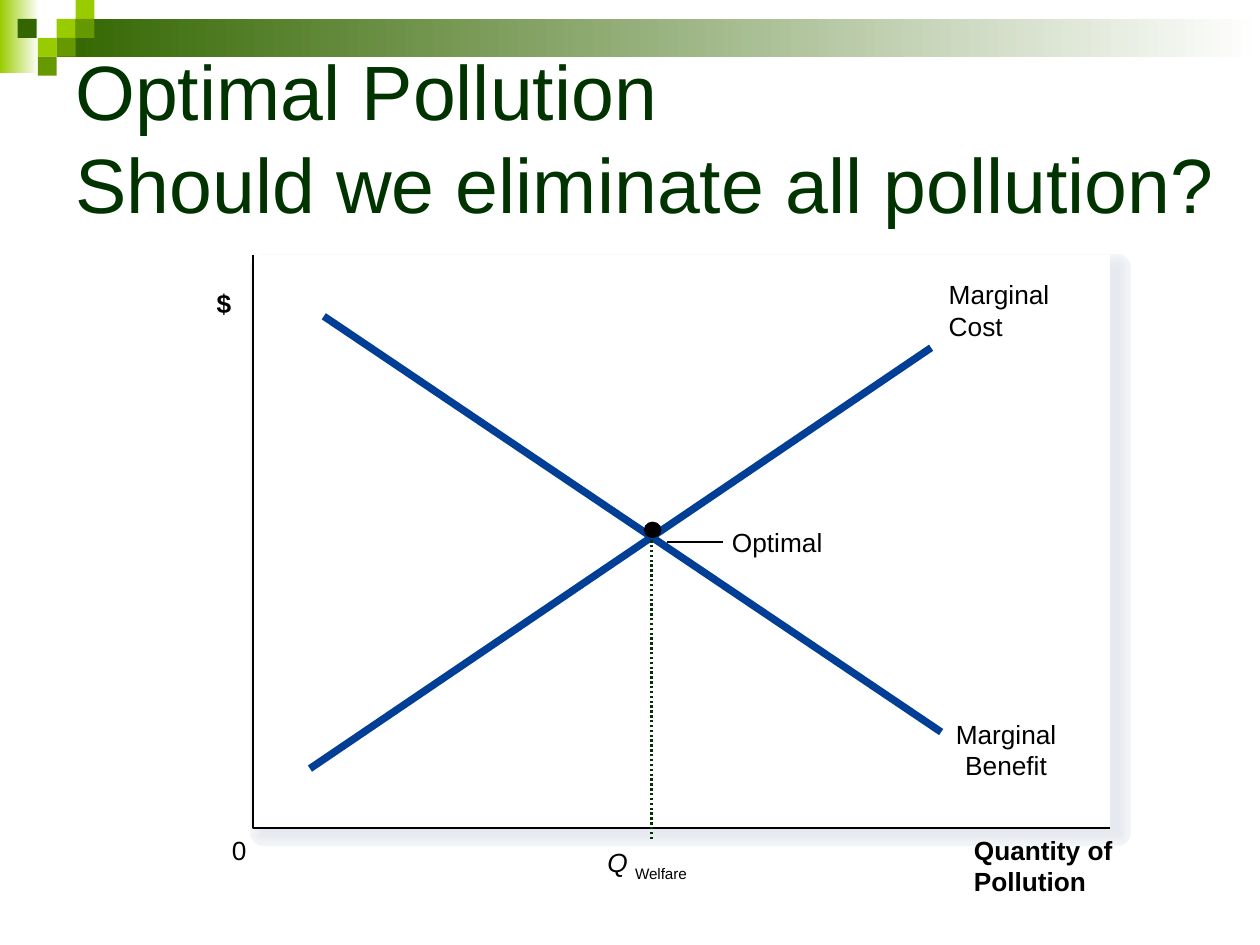
from pptx import Presentation
from pptx.dml.color import RGBColor
from pptx.enum.dml import MSO_LINE
from pptx.enum.shapes import MSO_CONNECTOR, MSO_SHAPE as Shape
from pptx.enum.text import MSO_ANCHOR as Anchor, PP_ALIGN as Align
from pptx.oxml.ns import qn
from pptx.util import Inches, Pt
from lxml.etree import SubElement

BLACK, WHITE, BLUE, DARK_GREEN = "000000", "FFFFFF", "003F95", "003300"
LIME, GREEN, FOREST = "99CC00", "669900", "336600"
SQUARE = 0.15
SQUARES = [(0.45, 0.15, LIME), (0.6, 0, LIME), (0.6, 0.15, GREEN), (0.3, 0.3, LIME),
           (0.14, 0.15, FOREST), (0.45, 0.3, GREEN), (0.3, 0.45, GREEN)]
SHADOW_COLORS = ["F3F6F9", "F2F4F8", "F1F4F7", "F0F2F5", "EEF1F4", "EDEFF3",
                 "EBEEF2", "EAECF1", "E9EBF0", "E7EAEF", "E6E9EF"]
PLOT = (2.01, 2.02, 6.8, 4.55)
SHADOW = (2.09, 2.12, 6.78, 4.49)


def color(value):
    """Turn a hex string into a colour."""
    return RGBColor.from_string(value)


def add_block(slide, box, fill, kind=Shape.RECTANGLE, line_width=0):
    """Add a solid shape, outlined in its own colour if a width is given."""
    shape = slide.shapes.add_shape(kind, *map(Inches, box))
    shape.shadow.inherit = False
    shape.fill.solid()
    shape.fill.fore_color.rgb = color(fill)
    if line_width:
        shape.line.color.rgb = color(fill)
        shape.line.width = Pt(line_width)
    else:
        shape.line.fill.background()
    return shape


def add_fade(slide, box, start):
    """Add a rectangle that fades to white from left to right."""
    fill = add_block(slide, box, start).fill
    fill.gradient()
    fill.gradient_angle = 0
    for stop, value in zip(fill.gradient_stops, (start, WHITE)):
        stop.color.rgb = color(value)


def add_line(slide, start, end, stroke, width, dash=None):
    """Add a straight line between two points."""
    line = slide.shapes.add_connector(
        MSO_CONNECTOR.STRAIGHT, *map(Inches, (*start, *end)))
    line.line.color.rgb = color(stroke)
    line.line.width = Pt(width)
    if dash:
        line.line.dash_style = dash
    SubElement(line._element.spPr, qn("a:effectLst"))


def add_axes(slide):
    """Draw both axes as one open outline."""
    left, top, width, height = PLOT
    bottom, right = top + height, left + width
    builder = slide.shapes.build_freeform(Inches(left), Inches(top))
    builder.add_line_segments(
        [(Inches(left), Inches(bottom)), (Inches(right), Inches(bottom))], close=False)
    axes = builder.convert_to_shape()
    axes.shadow.inherit = False
    axes.fill.background()
    axes.line.color.rgb = color(BLACK)
    axes.line.width = Pt(1.38)


def add_span(para, text, size=15, ink=BLACK, bold=False, italic=False):
    """Add one run of text and return it."""
    span = para.add_run()
    span.text = text
    font = span.font
    font.name, font.size, font.bold, font.italic = "Arial", Pt(size), bold, italic
    font.color.rgb = color(ink)
    return span


def add_frame(slide, box, inset=0, wrap=False):
    """Add an empty text box and return its text frame."""
    frame = slide.shapes.add_textbox(*map(Inches, box)).text_frame
    frame.word_wrap = wrap
    frame.margin_left = frame.margin_right = Inches(inset)
    frame.margin_top = frame.margin_bottom = Inches(inset / 2)
    return frame


def add_label(slide, box, *lines, bold=False, align=Align.LEFT):
    """Add a label with one paragraph for each line."""
    frame = add_frame(slide, box)
    for index, text in enumerate(lines):
        para = frame.add_paragraph() if index else frame.paragraphs[0]
        para.alignment = align
        add_span(para, text, bold=bold)


def add_title(slide):
    """Add the two-line title."""
    frame = add_frame(slide, (0.5, 0.33, 9.5, 1.5), inset=0.1, wrap=True)
    frame.vertical_anchor = Anchor.MIDDLE
    para = frame.paragraphs[0]
    add_span(para, "Optimal Pollution", 44, DARK_GREEN)
    para.add_line_break()
    add_span(para, "Should we eliminate all pollution?", 44, DARK_GREEN)


def add_banner(slide):
    """Add the fading bar and the squares at the top."""
    add_fade(slide, (0, 0, 0.31, 0.58), LIME)
    add_fade(slide, (0.45, 0.15, 9.55, 0.3), FOREST)
    for left, top, fill in SQUARES:
        add_block(slide, (left, top, SQUARE, SQUARE), fill)


def add_plot(slide):
    """Add the plot area with its soft shadow, axes and axis labels."""
    for step, fill in enumerate(SHADOW_COLORS):
        add_block(slide, SHADOW, fill, line_width=15.5 - 1.41 * step)
    add_block(slide, PLOT, WHITE)
    add_axes(slide)
    add_label(slide, (7.73, 6.62, 1.16, 0.51), "Quantity of", "Pollution", bold=True)
    add_label(slide, (1.84, 6.62, 0.12, 0.25), "0")
    add_label(slide, (1.72, 2.28, 0.12, 0.25), "$", bold=True)


def add_curves(slide):
    """Add the two curves and the optimal point with their labels."""
    add_line(slide, (5.29, 4.3), (5.74, 4.3), BLACK, 1.38)
    add_label(slide, (5.81, 4.18, 0.73, 0.25), "Optimal")
    add_line(slide, (2.57, 2.51), (7.47, 5.81), BLUE, 4.25)
    add_label(slide, (7.57, 5.7, 0.83, 0.51), "Marginal", "Benefit", align=Align.CENTER)
    add_line(slide, (7.39, 2.76), (2.46, 6.1), BLUE, 4.25)
    add_label(slide, (7.53, 2.21, 0.86, 0.51), "Marginal", "Cost")
    add_line(slide, (5.17, 6.66), (5.17, 4.2), DARK_GREEN, 1.38, MSO_LINE.ROUND_DOT)
    add_block(slide, (5.11, 4.14, 0.14, 0.13), BLACK, Shape.OVAL)
    para = add_frame(slide, (4.82, 6.72, 0.7, 0.24), wrap=True).paragraphs[0]
    add_span(para, "Q ", italic=True)
    add_span(para, "Welfare").font._element.set("baseline", "-25000")


def main():
    """Build and save the slide."""
    deck = Presentation()
    deck.slide_width, deck.slide_height = Inches(10), Inches(7.5)
    slide = deck.slides.add_slide(deck.slide_layouts[6])
    add_banner(slide)
    add_title(slide)
    add_plot(slide)
    add_curves(slide)
    deck.save("out.pptx")


if __name__ == "__main__":
    main()
